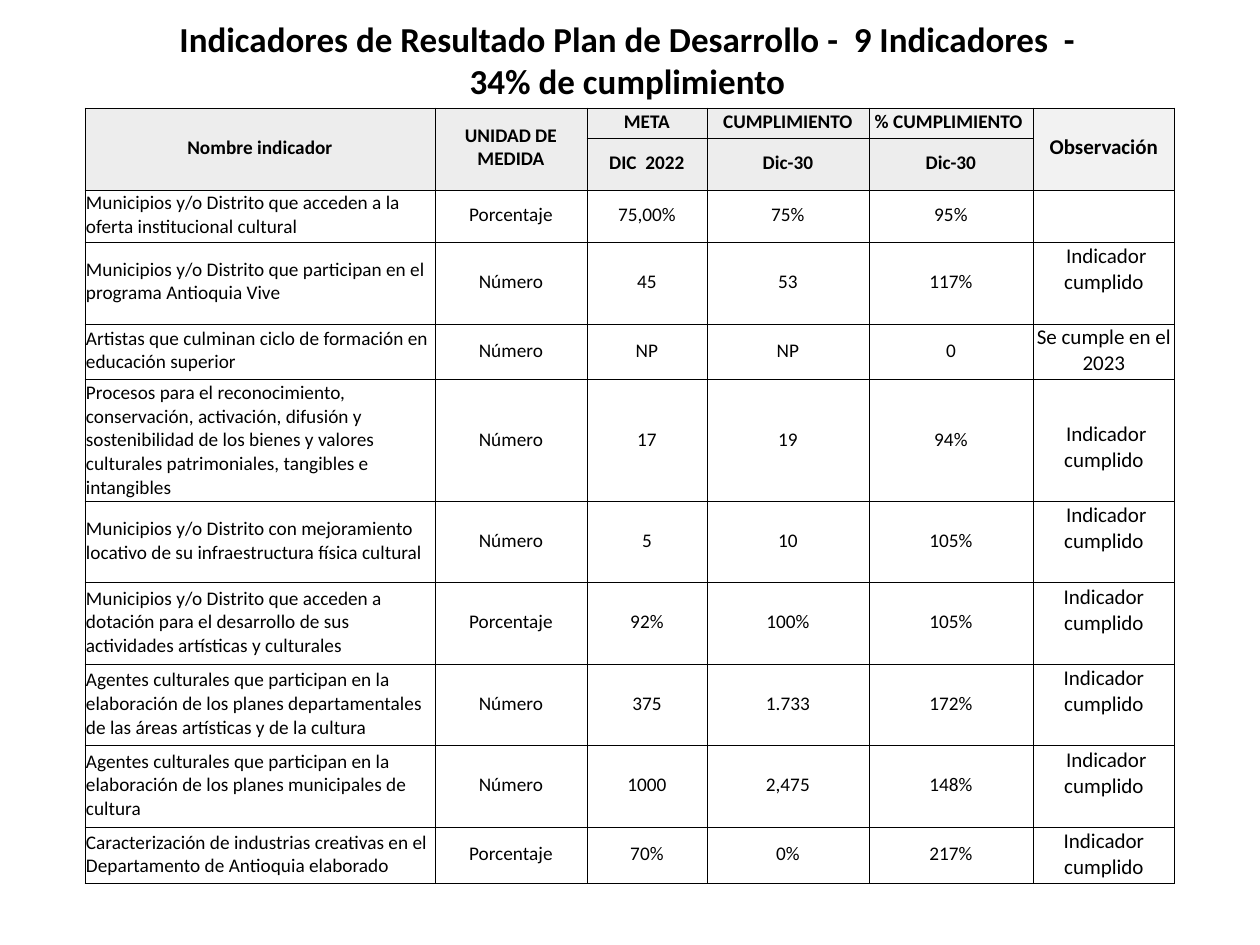
import dataclasses

import lxml.etree
import pptx
import pptx.dml.color
import pptx.enum.text
import pptx.oxml.ns
import pptx.slide
import pptx.table
import pptx.text.text
import pptx.util

SCALE = 914400 / 126  # EMU in one px
FONT = "Calibri"
COLORS = {"text": "000000", "line": "000000", "head": "EDEDED",
          "pale": "F2F2F2", "body": "FFFFFF"}
ALIGN = pptx.enum.text.PP_ALIGN
ANCHOR = pptx.enum.text.MSO_ANCHOR


@dataclasses.dataclass
class Style:
    fill: str = "body"
    size: int = 11
    bold: bool = False
    align: ALIGN = ALIGN.CENTER
    anchor: ANCHOR = ANCHOR.MIDDLE
    bottom: int = 4


@dataclasses.dataclass
class Goal:
    name: str
    unit: str
    target: str
    done: str
    rate: str
    note: str
    height: int
    raised: bool = True  # note sits one line above the cell bottom


HEAD = Style(fill="head", bold=True)
PALE = Style(fill="pale", bold=True)
WIDE = Style(fill="pale", bold=True, size=12)
NAME = Style(align=ALIGN.LEFT)
DATA = Style()
NOTE = Style(size=12)
HIGH = Style(size=12, anchor=ANCHOR.BOTTOM, bottom=29)

TITLE = "Indicadores de Resultado Plan de Desarrollo -  9 Indicadores  - 34% de cumplimiento"
WIDTHS = [350, 152, 120, 162, 164, 142]
TOPS = [30, 52]  # heights of the two header rows

# Header rows: text and style; an empty text lies under a merged cell
HEADER = [
    [("Nombre indicador", HEAD), ("UNIDAD DE MEDIDA", HEAD), ("META", HEAD),
     ("CUMPLIMIENTO", HEAD), ("% CUMPLIMIENTO ", PALE), ("Observación", WIDE)],
    [("", HEAD), ("", HEAD), ("DIC  2022", HEAD),
     ("Dic-30", HEAD), ("Dic-30", HEAD), ("", WIDE)],
]
MERGED = [0, 1, 5]

GOALS = [
    Goal("Municipios y/o Distrito que acceden a la oferta institucional cultural",
         "Porcentaje", "75,00%", "75%", "95%", "", 52, False),
    Goal("Municipios y/o Distrito que participan en el programa Antioquia Vive",
         "Número", "45", "53", "117%", " Indicador cumplido", 82),
    Goal("Artistas que culminan ciclo de formación en educación superior",
         "Número", "NP", "NP", "0", "Se cumple en el 2023", 56, False),
    Goal("Procesos para el reconocimiento, conservación, activación, difusión y "
         "sostenibilidad de los bienes y valores culturales patrimoniales, "
         "tangibles e intangibles",
         "Número", "17", "19", "94%", " Indicador cumplido", 122),
    Goal("Municipios y/o Distrito con mejoramiento locativo de su "
         "infraestructura física cultural",
         "Número", "5", "10", "105%", " Indicador cumplido", 81),
    Goal("Municipios y/o Distrito que acceden a dotación para el desarrollo de "
         "sus actividades artísticas y culturales",
         "Porcentaje", "92%", "100%", "105%", "Indicador cumplido", 82),
    Goal("Agentes culturales que participan en la elaboración de los planes "
         "departamentales de las áreas artísticas y de la cultura",
         "Número", "375", "1.733", "172%", "Indicador cumplido", 81),
    Goal("Agentes culturales que participan en la elaboración de los planes "
         "municipales de cultura",
         "Número", "1000", "2,475", "148%", " Indicador cumplido", 82),
    Goal("Caracterización de industrias creativas en el Departamento de "
         "Antioquia elaborado",
         "Porcentaje", "70%", "0%", "217%", "Indicador cumplido", 56, False),
]


def px(count: int) -> int:
    return round(count * SCALE)


def color(key: str) -> pptx.dml.color.RGBColor:
    return pptx.dml.color.RGBColor.from_string(COLORS[key])


def write(frame: pptx.text.text.TextFrame, text: str, style: Style) -> None:
    para = frame.paragraphs[0]
    para.alignment = style.align
    if text:
        run = para.add_run()
        run.text = text
        run.font.name = FONT
        run.font.size = pptx.util.Pt(style.size)
        run.font.bold = style.bold
        run.font.color.rgb = color("text")


def border(cell: pptx.table._Cell) -> None:
    props = cell._tc.get_or_add_tcPr()
    qn = pptx.oxml.ns.qn
    for side in ("a:lnL", "a:lnR", "a:lnT", "a:lnB"):
        line = lxml.etree.SubElement(props, qn(side), w=str(pptx.util.Pt(0.5)))
        solid = lxml.etree.SubElement(line, qn("a:solidFill"))
        lxml.etree.SubElement(solid, qn("a:srgbClr"), val=COLORS["line"])


def draw_cell(cell: pptx.table._Cell, text: str, style: Style) -> None:
    border(cell)
    cell.fill.solid()
    cell.fill.fore_color.rgb = color(style.fill)
    cell.margin_left = cell.margin_right = cell.margin_top = px(1)
    cell.margin_bottom = px(style.bottom)
    cell.vertical_anchor = style.anchor
    write(cell.text_frame, text, style)


def goal_row(goal: Goal) -> list[tuple[str, Style]]:
    data = [(text, DATA) for text in (goal.unit, goal.target, goal.done, goal.rate)]
    return [(goal.name, NAME), *data, (goal.note, HIGH if goal.raised else NOTE)]


def draw_title(slide: pptx.slide.Slide) -> None:
    title = slide.shapes.title
    title.left, title.top, title.width, title.height = map(px, (135, 11, 985, 97))
    frame = title.text_frame
    frame.word_wrap = True
    frame.auto_size = pptx.enum.text.MSO_AUTO_SIZE.SHAPE_TO_FIT_TEXT
    frame.vertical_anchor = ANCHOR.TOP
    write(frame, TITLE, Style(size=20, bold=True))


def draw_table(slide: pptx.slide.Slide) -> None:
    rows = HEADER + [goal_row(goal) for goal in GOALS]
    heights = TOPS + [goal.height for goal in GOALS]
    table = slide.shapes.add_table(
        len(rows), len(WIDTHS), px(85), px(108),
        px(sum(WIDTHS)), px(sum(heights))).table
    table.first_row = table.horz_banding = False
    for column, width in zip(table.columns, WIDTHS):
        column.width = px(width)
    for row, height, items in zip(table.rows, heights, rows):
        row.height = px(height)
        for cell, (text, style) in zip(row.cells, items):
            draw_cell(cell, text, style)
    for col in MERGED:
        table.cell(0, col).merge(table.cell(1, col))


def main() -> None:
    deck = pptx.Presentation()
    deck.slide_width, deck.slide_height = px(1260), px(945)
    slide = deck.slides.add_slide(deck.slide_layouts[5])
    draw_title(slide)
    draw_table(slide)
    deck.save("out.pptx")


if __name__ == "__main__":
    main()
